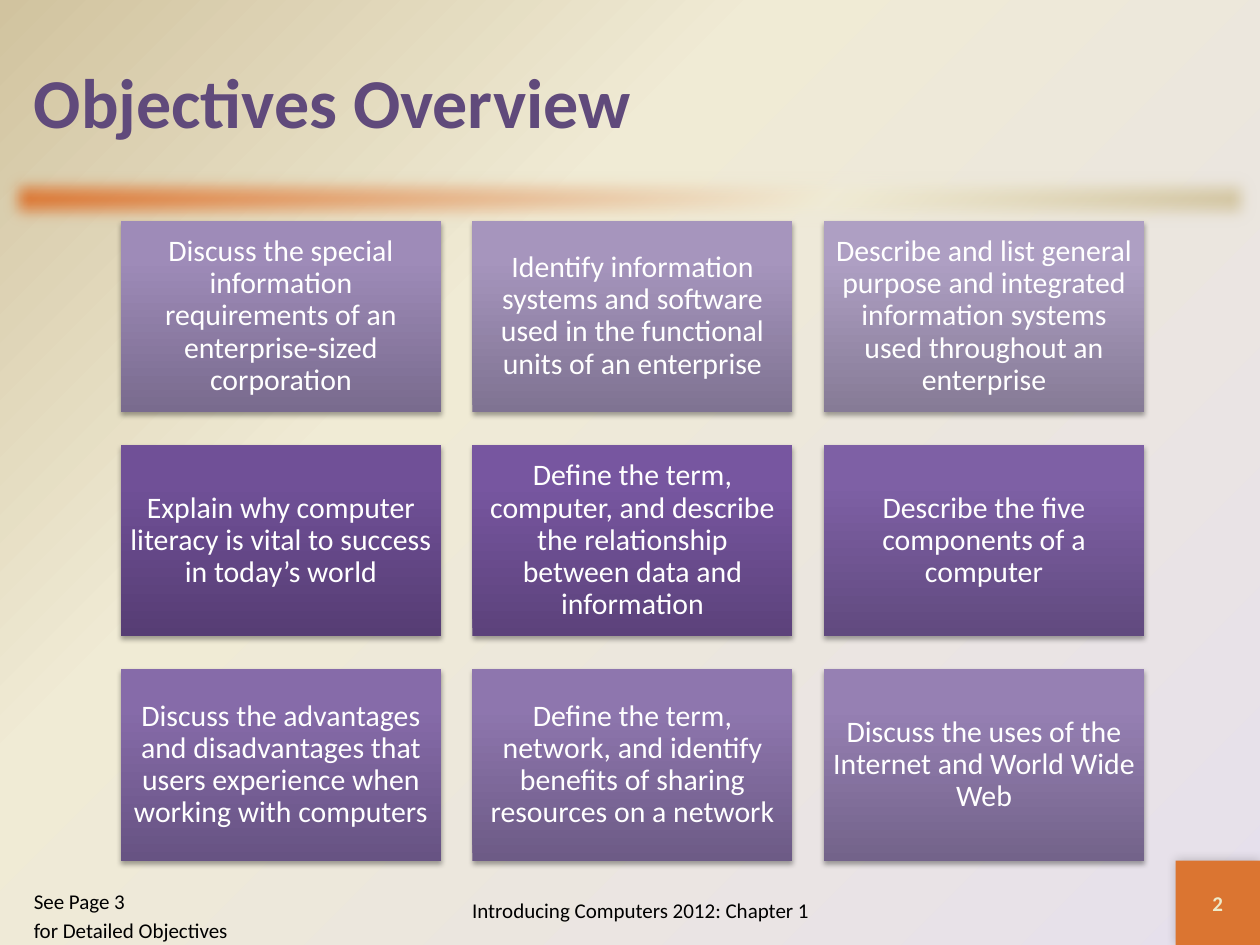
from dataclasses import dataclass

from lxml import etree
from pptx import Presentation
from pptx.dml.color import RGBColor
from pptx.enum.shapes import MSO_SHAPE as Shape
from pptx.enum.text import MSO_ANCHOR as Anchor, PP_ALIGN as Align
from pptx.oxml import parse_xml
from pptx.oxml.ns import nsdecls, qn
from pptx.util import Inches, Pt


@dataclass(frozen=True)
class Theme:
    font: str = "Calibri"
    title: str = "604A7B"
    accent: str = "DB7531"
    lavender: str = "E6E0EC"
    cream: str = "F0EBD5"
    tan: str = "D1C39F"
    white: str = "FFFFFF"
    black: str = "000000"
    number: str = "EEEBCA"
    title_size: int = 40
    tile_size: int = 17
    small_size: int = 12


theme = Theme()


def set_gradient(fill, parent, stops, direction):
    """Give the fill inside parent these (position, colour) stops."""
    fill.gradient()
    stop_xml = "".join(
        f'<a:gs pos="{position * 1000}"><a:srgbClr val="{color}"/></a:gs>'
        for position, color in stops
    )
    gradient = parse_xml(
        f'<a:gradFill {nsdecls("a")} rotWithShape="1">'
        f"<a:gsLst>{stop_xml}</a:gsLst>{direction}</a:gradFill>"
    )
    parent.replace(parent.find(qn("a:gradFill")), gradient)


def write(shape, lines, size, color, bold=False, align=Align.LEFT,
          anchor=Anchor.MIDDLE, spacing=None, space_before=0):
    """Write one paragraph for each line of text."""
    frame = shape.text_frame
    frame.word_wrap = True
    frame.vertical_anchor = anchor
    for index, line in enumerate(lines):
        paragraph = frame.add_paragraph() if index else frame.paragraphs[0]
        paragraph.alignment = align
        paragraph.line_spacing = spacing
        if index:
            paragraph.space_before = Pt(space_before)
        run = paragraph.add_run()
        run.text = line
        run.font.name = theme.font
        run.font.size = Pt(size)
        run.font.bold = bold
        run.font.color.rgb = RGBColor.from_string(color)


presentation = Presentation()
presentation.slide_width = Inches(10)
presentation.slide_height = Inches(7.5)
slide = presentation.slides.add_slide(presentation.slide_layouts[6])
shapes = slide.shapes

# Background
background_fill = slide.background.fill
background_fill.solid()
set_gradient(
    background_fill,
    slide.element.find(".//" + qn("p:bgPr")),
    [(0, theme.lavender), (65, theme.cream), (100, theme.tan)],
    '<a:path path="circle"><a:fillToRect l="100000" t="100000"/></a:path>',
)

# Soft-edged bar under the title
bar = shapes.add_shape(Shape.RECTANGLE, Inches(0), Inches(1.33), Inches(10), Inches(0.5))
bar.line.fill.background()
bar.shadow.inherit = False
set_gradient(
    bar.fill,
    bar.element.spPr,
    [(0, theme.accent), (65, theme.cream), (100, theme.tan)],
    '<a:lin ang="2700000" scaled="1"/>',
)
bar_effects = bar.element.spPr.find(qn("a:effectLst"))
etree.SubElement(bar_effects, qn("a:softEdge"), rad=str(Pt(10)))

# Title
title = shapes.add_textbox(Inches(0.17), Inches(0.17), Inches(9.67), Inches(1.25))
write(title, ["Objectives Overview"], theme.title_size, theme.title, bold=True)

# Objective tiles: text, then gradient colours from bottom to top
tiles = [
    ("Discuss the special information requirements of an enterprise-sized corporation",
     "796B8E", "9E8BB8", "9E8BBA"),
    ("Identify information systems and software used in the functional units of an enterprise",
     "7F7392", "A695BD", "A695BF"),
    ("Describe and list general purpose and integrated information systems used throughout "
     "an enterprise", "867B96", "AE9FC3", "AE9FC4"),
    ("Explain why computer literacy is vital to success in today’s world",
     "563D74", "705097", "704F99"),
    ("Define the term, computer, and describe the relationship between data and information",
     "5C427B", "7756A0", "7755A2"),
    ("Describe the five components of a computer", "614A7F", "7E60A5", "7F60A7"),
    ("Discuss the advantages and disadvantages that users experience when working with "
     "computers", "675383", "866BA9", "876BAB"),
    ("Define the term, network, and identify benefits of sharing resources on a network",
     "6D5B86", "8E76AE", "8E75B0"),
    ("Discuss the uses of the Internet and World Wide Web", "73638A", "9680B3", "9680B5"),
]
shadowed = []
for index, (text, *colors) in enumerate(tiles):
    row, column = divmod(index, 3)
    tile = shapes.add_shape(
        Shape.RECTANGLE,
        Inches(0.96 + 2.79 * column), Inches(1.75 + 1.78 * row),
        Inches(2.54), Inches(1.52),
    )
    set_gradient(tile.fill, tile.element.spPr, zip((0, 80, 100), colors),
                 '<a:lin ang="16200000" scaled="0"/>')
    frame = tile.text_frame
    frame.margin_left = frame.margin_right = Inches(0.07)
    frame.margin_top = frame.margin_bottom = Inches(0.07)
    write(tile, [text], theme.tile_size, theme.white, align=Align.CENTER, spacing=0.9)
    shadowed.append((tile, 3.1, 1.8, 90, 35))

# Slide number square
square = shapes.add_shape(
    Shape.RECTANGLE, Inches(9.33), Inches(6.83), Inches(0.67), Inches(0.67)
)
square.fill.solid()
square.fill.fore_color.rgb = RGBColor.from_string(theme.accent)
write(square, ["2"], theme.small_size, theme.number, bold=True, align=Align.CENTER)
shadowed.append((square, 6, 0, 225, 20))

# Shadows of the tiles and the square: blur, distance, angle, opacity
for shape, blur, distance, angle, opacity in shadowed:
    shape.line.fill.background()
    shape.shadow.inherit = False
    shape.element.spPr.find(qn("a:effectLst")).append(parse_xml(
        f'<a:outerShdw {nsdecls("a")} blurRad="{Pt(blur)}" dist="{Pt(distance)}" '
        f'dir="{angle * 60000}" rotWithShape="0"><a:srgbClr val="{theme.black}">'
        f'<a:alpha val="{opacity * 1000}"/></a:srgbClr></a:outerShdw>'
    ))

# Footer and page reference
footer = shapes.add_textbox(Inches(3), Inches(6.95), Inches(4.17), Inches(0.55))
write(footer, ["Introducing Computers 2012: Chapter 1"], theme.small_size, theme.black,
      align=Align.CENTER)
reference = shapes.add_textbox(Inches(0.17), Inches(7), Inches(1.83), Inches(0.5))
write(reference, ["See Page 3", "for Detailed Objectives"], theme.small_size, theme.black,
      anchor=Anchor.TOP, space_before=2.4)

presentation.save("out.pptx")
